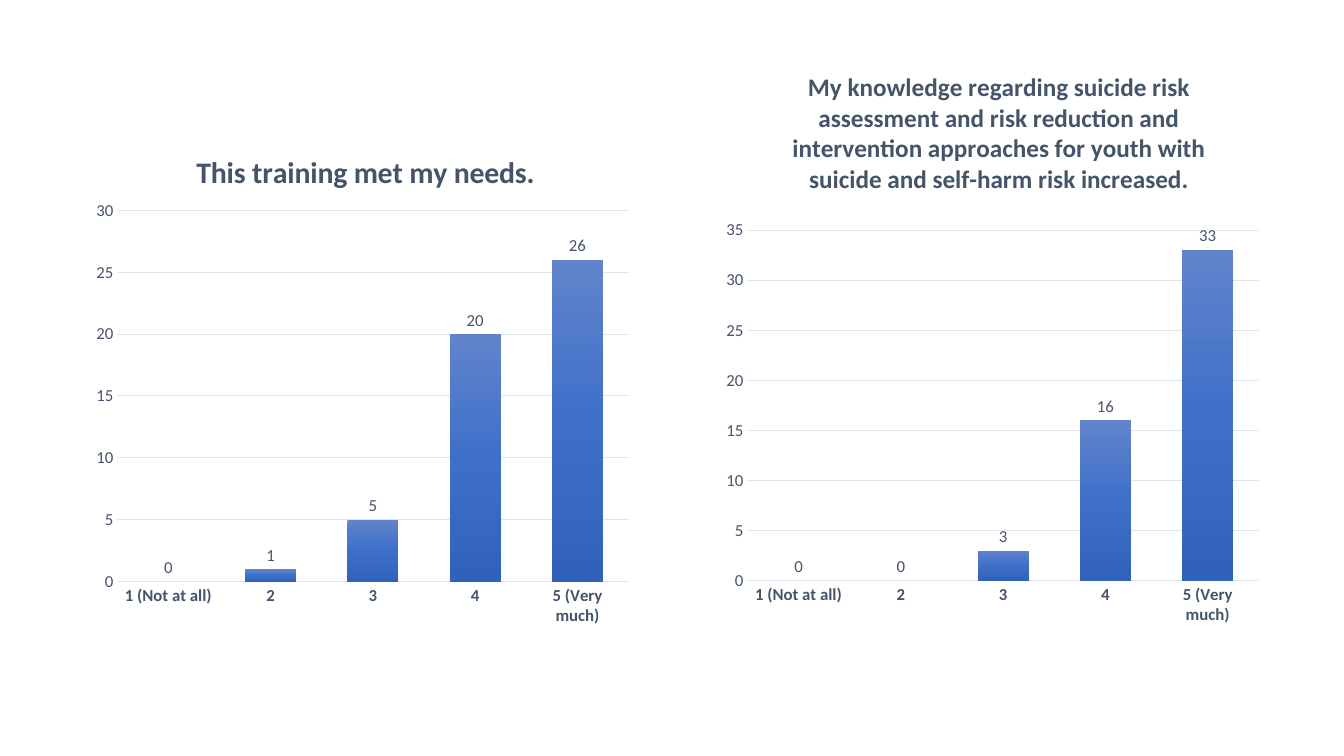
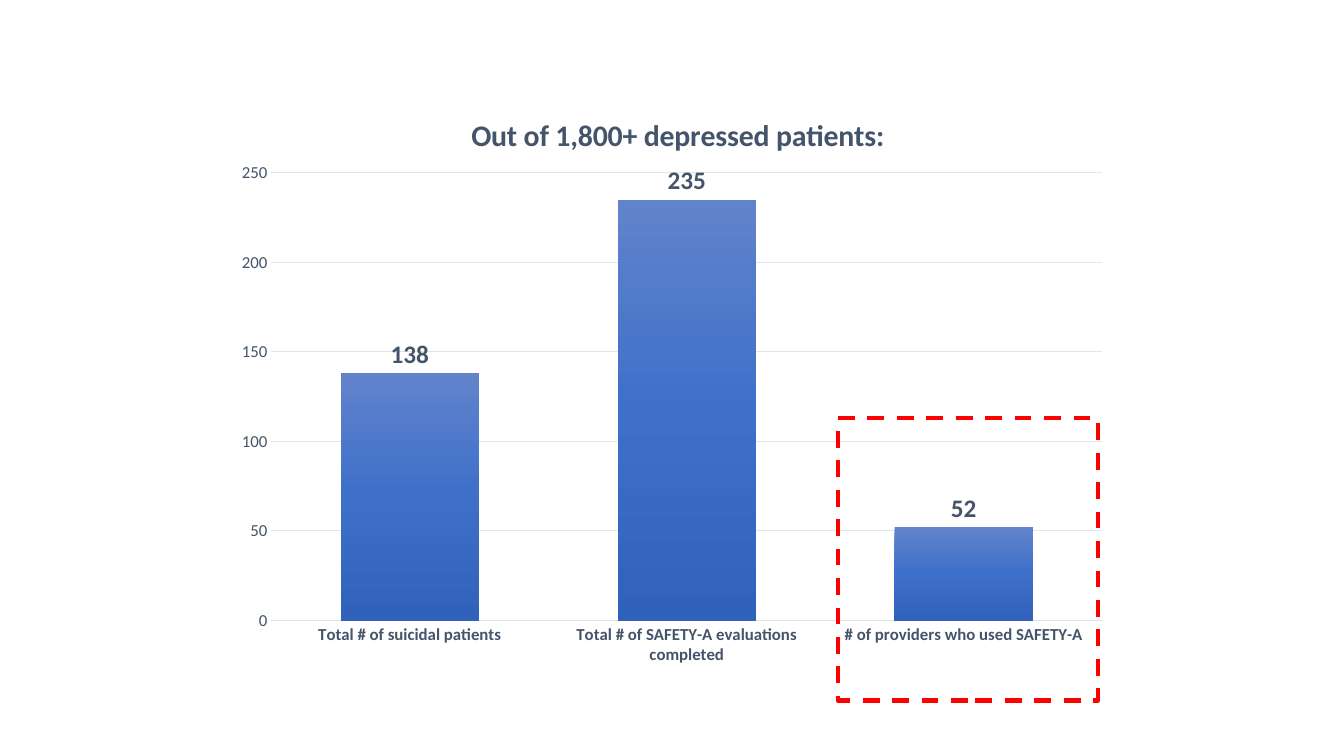
from copy import deepcopy
from dataclasses import dataclass

from lxml.etree import SubElement
from pptx import Presentation
from pptx.chart.data import CategoryChartData
from pptx.dml.color import RGBColor
from pptx.enum.chart import XL_CHART_TYPE, XL_LABEL_POSITION, XL_TICK_MARK
from pptx.enum.dml import MSO_LINE
from pptx.enum.shapes import MSO_SHAPE
from pptx.oxml.ns import qn
from pptx.util import Inches, Pt


@dataclass(frozen=True)
class Theme:
    face: str = "Calibri"
    ink: str = "44546A"
    grid: str = "E0E5EB"
    alert: str = "FF0000"
    bars: tuple = ("6183CB", "3E70CA", "3062BB")
    small: float = 12
    large: float = 18
    title: float = 21.3


theme = Theme()


def style(font, size, bold=False):
    font.name = theme.face
    font.size = Pt(size)
    font.bold = bold
    font.color.rgb = RGBColor.from_string(theme.ink)


def place(parent, index, **parts):
    """Give a chart part a manual layout, in fractions of the chart."""
    for old in parent.findall(qn("c:layout")):
        parent.remove(old)
    layout = SubElement(parent, qn("c:layout"))
    parent.insert(index, layout)
    manual = SubElement(layout, qn("c:manualLayout"))
    if "w" in parts:
        SubElement(manual, qn("c:layoutTarget")).set("val", "inner")
    for mode in ("xMode", "yMode"):
        SubElement(manual, qn(f"c:{mode}")).set("val", "edge")
    for name, value in parts.items():
        SubElement(manual, qn(f"c:{name}")).set("val", str(value))


deck = Presentation()
deck.slide_width = Inches(13.33)
deck.slide_height = Inches(7.5)
blank = deck.slide_layouts[6]
survey, results = [deck.slides.add_slide(blank) for _ in range(2)]

scale = ("1 (Not at all)", "2", "3", "4", "5 (Very much)")
counts = (
    "Total # of suicidal patients",
    "Total # of SAFETY-A evaluations completed",
    "# of providers who used SAFETY-A",
)
knowledge = (
    "My knowledge regarding suicide risk assessment and risk reduction and "
    "intervention approaches for youth with suicide and self-harm risk increased."
)

# slide, box, title, title size, title corner, plot area, top, step, label size, bold, names, values
charts = (
    (survey, (0.85, 1.19, 5.49, 5.13), "This training met my needs.", theme.title,
     (0.19, 0.05), (0.057, 0.175, 0.924, 0.718), 30, 5, theme.small, False,
     scale, (0, 1, 5, 20, 26)),
    (survey, (7.1, 0.59, 5.49, 5.72), knowledge, theme.large,
     (0.13, 0.01), (0.057, 0.296, 0.924, 0.608), 35, 5, theme.small, False,
     scale, (0, 0, 3, 16, 33)),
    (results, (2.22, 0.79, 8.89, 5.93), "Out of 1,800+ depressed patients:", theme.title,
     (0.27, 0.05), (0.053, 0.156, 0.927, 0.749), 250, 50, theme.large, True,
     counts, (138, 235, 52)),
)

for (slide, box, title, size, corner, area, top, step,
     label, bold, names, values) in charts:
    data = CategoryChartData()
    data.categories = names
    data.add_series("Series 1", values)
    frame = slide.shapes.add_chart(
        XL_CHART_TYPE.COLUMN_CLUSTERED, *map(Inches, box), data)
    chart = frame.chart
    chart.has_legend = False
    style(chart.font, theme.small)

    chart.has_title = True
    head = chart.chart_title
    head.text_frame.text = title
    style(head.text_frame.paragraphs[0].runs[0].font, size, True)
    place(head._element, 1, **dict(zip("xy", corner)))
    plot_area = chart._chartSpace.find(".//" + qn("c:plotArea"))
    place(plot_area, 0, **dict(zip("xywh", area)))

    across, up = chart.category_axis, chart.value_axis
    for axis in (across, up):
        axis.major_tick_mark = XL_TICK_MARK.NONE
        axis.minor_tick_mark = XL_TICK_MARK.NONE
        style(axis.tick_labels.font, theme.small, axis is across)
    up.minimum_scale = 0
    up.maximum_scale = top
    up.major_unit = step
    up.format.line.fill.background()
    for line in (across.format.line, up.major_gridlines.format.line):
        line.color.rgb = RGBColor.from_string(theme.grid)
        line.width = Pt(0.75)

    plot = chart.plots[0]
    plot.gap_width = 100
    plot.overlap = -24
    plot.vary_by_categories = False
    plot.has_data_labels = True
    plot.data_labels.show_value = True
    plot.data_labels.position = XL_LABEL_POSITION.OUTSIDE_END
    style(plot.data_labels.font, label, bold)

    series = plot.series[0]
    fill = series.format.fill
    fill.gradient()
    fill.gradient_angle = 270
    stops = series._element.find(".//" + qn("a:gsLst"))
    stops.insert(1, deepcopy(stops[0]))
    for stop, place_at, color in zip(fill.gradient_stops, (0, 0.5, 1), theme.bars):
        stop.position = place_at
        stop.color.rgb = RGBColor.from_string(color)

focus = results.shapes.add_shape(
    MSO_SHAPE.RECTANGLE, *map(Inches, (8.31, 4.15, 2.58, 2.8)))
focus.shadow.inherit = False
focus.fill.background()
focus.line.color.rgb = RGBColor.from_string(theme.alert)
focus.line.width = Pt(3)
focus.line.dash_style = MSO_LINE.DASH

deck.save("out.pptx")
